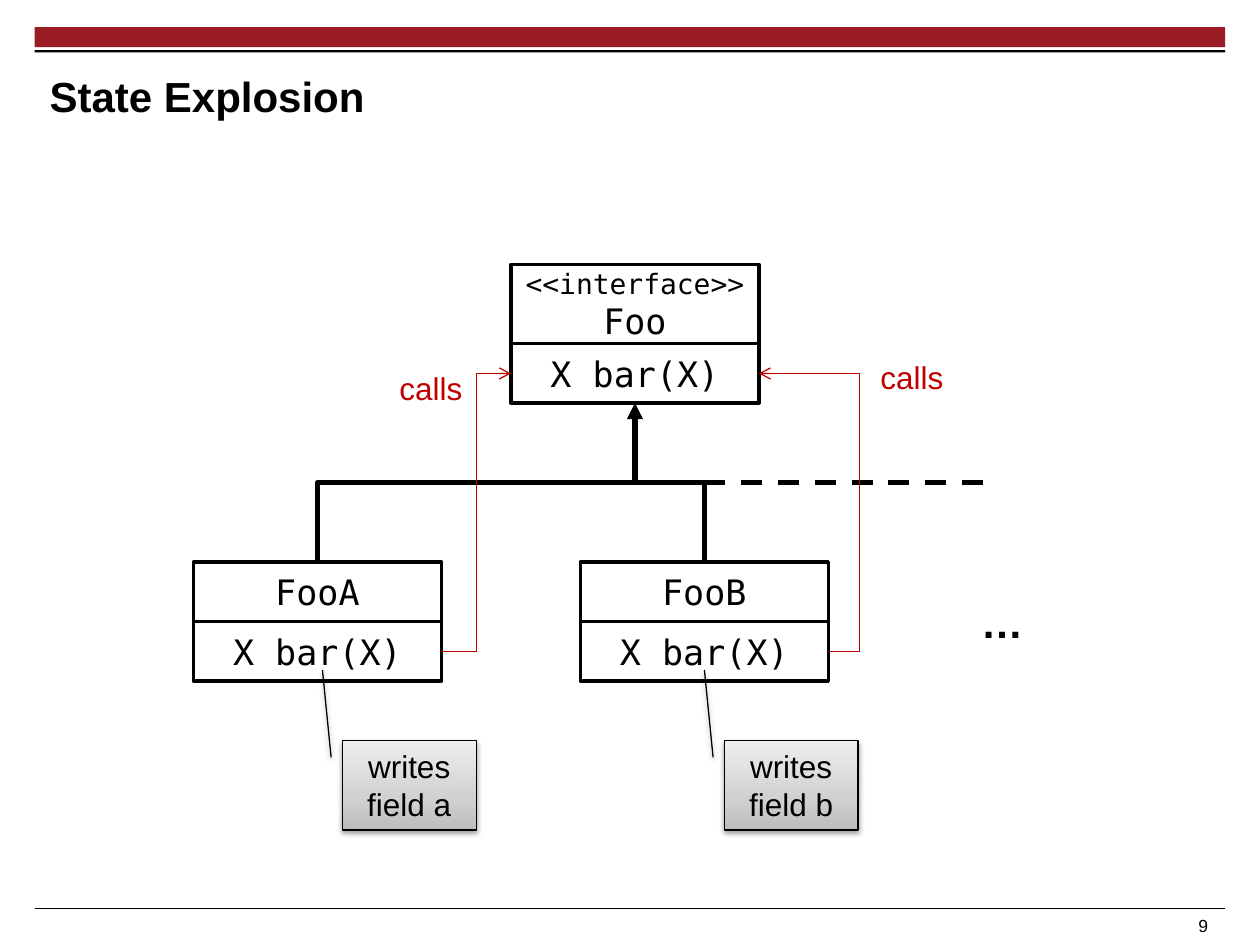
"""Build the State Explosion slide: an interface, two implementations and their calls."""
from dataclasses import dataclass

from lxml.etree import SubElement
from pptx import Presentation
from pptx.dml.color import RGBColor
from pptx.enum.dml import MSO_LINE_DASH_STYLE as Dash
from pptx.enum.shapes import MSO_CONNECTOR as Link, MSO_SHAPE as Kind
from pptx.enum.text import MSO_ANCHOR as Anchor, MSO_AUTO_SIZE as Fit, PP_ALIGN as Align
from pptx.oxml.ns import qn
from pptx.util import Cm, Pt

SANS, MONO = "Arial", "DejaVu Sans Mono"
BLACK, WHITE, BRAND, CALL, LABEL = "000000", "FFFFFF", "9C1C26", "BC0000", "C00000"
BOX_WIDTH, ROW_HEIGHT, HEAD_HEIGHT = 5, 1.2, 1.6
TOP, LEFT, BOTTOM, RIGHT = 0, 1, 2, 3
CALLOUT_ADJUSTMENTS = (0.188, -0.083, -0.79, -0.148)
CALLOUT_STOPS = ((0, "BDBDBD"), (35, "D1D1D1"), (100, "EEEEEE"))


@dataclass
class ClassBox:
    left: float
    top: float
    name_lines: tuple
    name_height: float = ROW_HEIGHT


@dataclass
class Note:
    left: float
    top: float
    text: str


INTERFACE = ClassBox(10.3, 5.33, (("<<interface>>", 16), ("Foo", 20)), HEAD_HEIGHT)
FOO_A = ClassBox(3.9, 11.33, (("FooA", 20),))
FOO_B = ClassBox(11.7, 11.33, (("FooB", 20),))
CALLS = (Note(17.5, 7.09, "calls"), Note(7.8, 7.32, "calls"))
WRITES = (Note(6.9, 14.93, "writes field a"), Note(14.6, 14.93, "writes field b"))


def color(value: str) -> RGBColor:
    """Turn a hex string into a colour."""
    return RGBColor.from_string(value)


def write(frame, *lines, size=18, font=SANS, ink=BLACK, bold=False,
          align=Align.LEFT, anchor=Anchor.TOP, wrap=True) -> None:
    """Fill a frame with lines, each a text or a (text, size) pair."""
    frame.word_wrap, frame.vertical_anchor = wrap, anchor
    for index, line in enumerate(lines):
        text, points = line if isinstance(line, tuple) else (line, size)
        para = frame.add_paragraph() if index else frame.paragraphs[0]
        para.alignment = align
        span = para.add_run()
        span.text = text
        span.font.name, span.font.size, span.font.bold = font, Pt(points), bold
        span.font.color.rgb = color(ink)


def add_text(page, left: float, top: float, width: float, height: float, text: str, **style):
    """Add a text box."""
    box = page.shapes.add_textbox(Cm(left), Cm(top), Cm(width), Cm(height))
    write(box.text_frame, text, **style)
    return box


def add_box(page, left: float, top: float, width: float, height: float,
            fill=WHITE, line_width=0.0, kind=Kind.RECTANGLE):
    """Add a filled shape without shadow, outlined in black if a width is given."""
    box = page.shapes.add_shape(kind, Cm(left), Cm(top), Cm(width), Cm(height))
    box.shadow.inherit = False
    box.fill.solid()
    box.fill.fore_color.rgb = color(fill)
    if line_width:
        box.line.color.rgb = color(BLACK)
        box.line.width = Pt(line_width)
    else:
        box.line.fill.background()
    return box


def add_class(page, item: ClassBox):
    """Draw a class as a name row over a method row and return both."""
    middle = dict(font=MONO, align=Align.CENTER, anchor=Anchor.MIDDLE)
    name = add_box(page, item.left, item.top, BOX_WIDTH, item.name_height, line_width=2)
    write(name.text_frame, *item.name_lines, **middle)
    method = add_box(page, item.left, item.top + item.name_height, BOX_WIDTH, ROW_HEIGHT,
                     line_width=2)
    write(method.text_frame, "X bar(X)", size=20, **middle)
    return name, method


def style_line(line, ink: str, width: float, head="") -> None:
    """Format a connector and give its end an optional arrowhead."""
    line.line.color.rgb = color(ink)
    line.line.width = Pt(width)
    if head:
        SubElement(line.get_or_add_ln(), qn("a:tailEnd"), type=head)
    SubElement(line._element.spPr, qn("a:effectLst"))


def add_line(page, left: float, right: float, y: float, width: float):
    """Draw a level black line."""
    line = page.shapes.add_connector(Link.STRAIGHT, Cm(left), Cm(y), Cm(right), Cm(y))
    style_line(line, BLACK, width)
    return line


def add_elbow(page, source, source_side: int, target, target_side: int):
    """Join the sides of two boxes with an elbow connector."""
    elbow = page.shapes.add_connector(Link.ELBOW, 0, 0, 0, 0)
    elbow.begin_connect(source, source_side)
    elbow.end_connect(target, target_side)
    return elbow


def add_inheritance(page, child, parent) -> None:
    """Draw an upright elbow from a child's top to its parent's bottom."""
    elbow = add_elbow(page, child, TOP, parent, BOTTOM)
    center_x, center_y = (elbow.begin_x + elbow.end_x) // 2, (elbow.begin_y + elbow.end_y) // 2
    leftward = elbow.end_x < elbow.begin_x
    width, height = elbow.height, elbow.width
    elbow.left, elbow.top = center_x - width // 2, center_y - height // 2
    elbow.width, elbow.height = width, height
    frame = elbow._element.spPr.find(qn("a:xfrm"))
    frame.set("rot", str(270 * 60000))
    frame.set("flipH", "0")
    frame.set("flipV", str(int(leftward)))
    style_line(elbow, BLACK, 3, "triangle")


def add_call(page, caller, target, side: int, bend=0.5) -> None:
    """Draw a red call arrow from a caller's right side."""
    elbow = add_elbow(page, caller, RIGHT, target, side)
    shape = elbow._element.spPr.find(qn("a:prstGeom"))
    guides = shape.find(qn("a:avLst"))
    if guides is None:
        guides = SubElement(shape, qn("a:avLst"))
    SubElement(guides, qn("a:gd"), name="adj1", fmla=f"val {round(bend * 100000)}")
    style_line(elbow, CALL, 0.75, "arrow")


def add_callout(page, note: Note) -> None:
    """Draw a shaded callout with a pointer and a soft shadow."""
    box = add_box(page, note.left, note.top, 2.7, 1.8, line_width=0.75,
                  kind=Kind.LINE_CALLOUT_1)
    for index, value in enumerate(CALLOUT_ADJUSTMENTS):
        box.adjustments[index] = value
    box.fill.gradient()
    gradient = box._element.spPr.find(qn("a:gradFill"))
    for child in list(gradient):
        gradient.remove(child)
    stops = SubElement(gradient, qn("a:gsLst"))
    for position, shade in CALLOUT_STOPS:
        stop = SubElement(stops, qn("a:gs"), pos=str(position * 1000))
        SubElement(stop, qn("a:srgbClr"), val=shade)
    SubElement(gradient, qn("a:lin"), ang=str(270 * 60000), scaled="0")
    effects = box._element.spPr.find(qn("a:effectLst"))
    shadow = SubElement(effects, qn("a:outerShdw"), blurRad=str(Pt(3.1)), dist=str(Pt(1.6)),
                        dir=str(90 * 60000), rotWithShape="0")
    SubElement(SubElement(shadow, qn("a:srgbClr"), val=BLACK), qn("a:alpha"), val="38000")
    write(box.text_frame, note.text, align=Align.CENTER, anchor=Anchor.MIDDLE)


def add_frame(page) -> None:
    """Draw the header bars, footer, page number and title."""
    add_box(page, 0.7, 0.55, 24, 0.4, fill=BRAND)
    add_box(page, 0.7, 1.01, 24, 0.05, fill=BLACK)
    add_line(page, 0.7, 24.7, 18.32, 0.6)
    add_text(page, 4.7, 18.32, 20, 0.64, "9 ", size=10, align=Align.RIGHT)
    title = page.shapes.title
    title.left, title.top, title.width, title.height = Cm(1), Cm(1.12), Cm(23.7), Cm(1.6)
    frame = title.text_frame
    frame.margin_left = frame.margin_right = frame.margin_top = frame.margin_bottom = 0
    frame.auto_size = Fit.NONE
    write(frame, "State Explosion", size=24, bold=True, anchor=Anchor.MIDDLE)


def main() -> None:
    """Build and save the deck."""
    deck = Presentation()
    deck.slide_width, deck.slide_height = Cm(25.4), Cm(19.05)
    page = deck.slides.add_slide(deck.slide_layouts[5])
    add_frame(page)
    _, interface_method = add_class(page, INTERFACE)
    name_a, method_a = add_class(page, FOO_A)
    name_b, method_b = add_class(page, FOO_B)
    for name in (name_b, name_a):
        add_inheritance(page, name, interface_method)
    add_line(page, 14.2, 19.9, 9.73, 3).line.dash_style = Dash.DASH
    add_text(page, 19.53, 11.91, 1.37, 1.27, "…", size=24, bold=True, wrap=False)
    add_call(page, method_b, interface_method, RIGHT, bend=-0.45)
    add_call(page, method_a, interface_method, LEFT)
    for note in CALLS:
        add_text(page, note.left, note.top, 1.8, 1.02, note.text, ink=LABEL, wrap=False)
    for note in WRITES:
        add_callout(page, note)
    deck.save("out.pptx")


if __name__ == "__main__":
    main()
